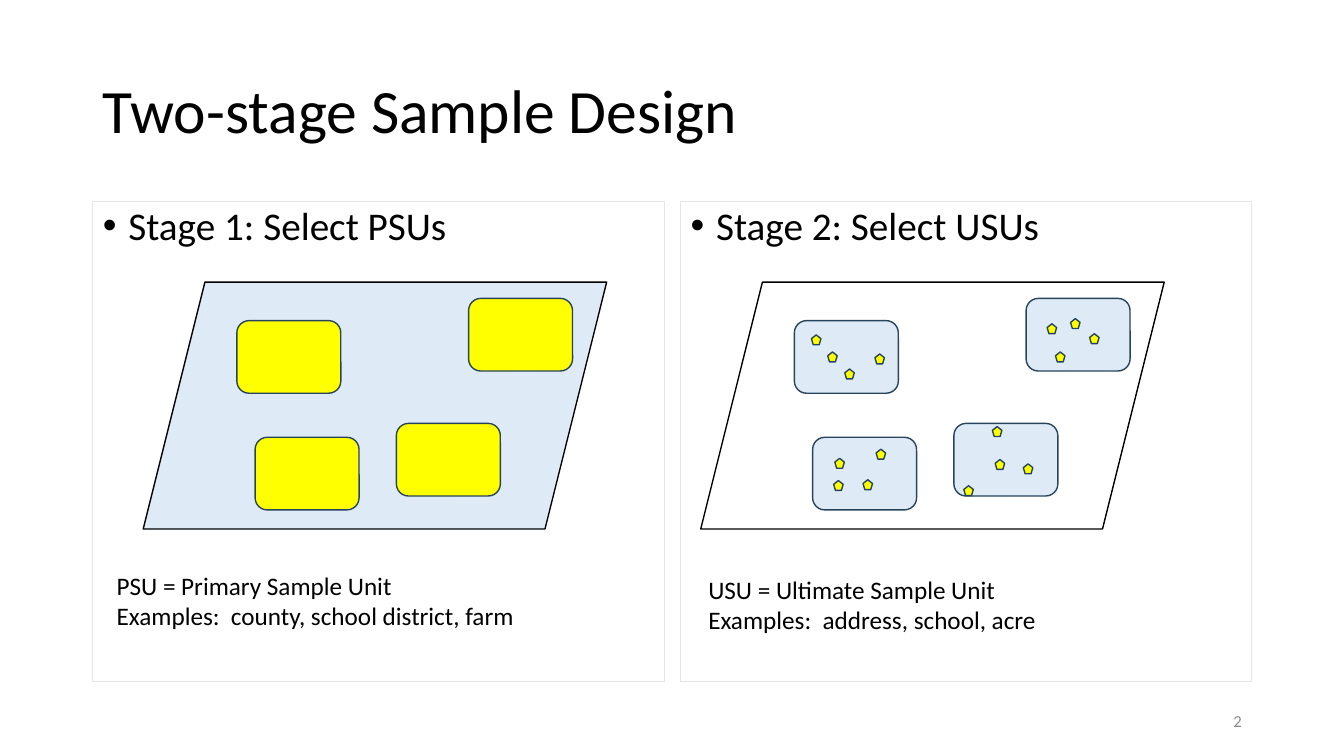
from lxml.etree import SubElement
from pptx import Presentation
from pptx.dml.color import RGBColor
from pptx.enum.shapes import MSO_SHAPE
from pptx.enum.text import MSO_ANCHOR, MSO_AUTO_SIZE, PP_ALIGN
from pptx.oxml.ns import qn
from pptx.util import Cm, Pt

HUES = {"ink": "000000", "edge": "28445D", "pale": "DEEBF7",
        "pick": "FFFF00", "frame": "E7E6E6", "gray": "8C8C8C"}

REGION = (11.68, 6.22)
CELL = (2.62, 1.83)
UNIT = (0.24, 0.25)

# Each cell's offset in the region, with its units' offsets in the cell
CELLS = [
    ((2.36, 0.97), [(0.43, 0.36), (0.84, 0.79), (1.27, 1.22), (2.03, 0.84)]),
    ((8.20, 0.41), [(0.53, 0.64), (1.60, 0.89), (0.74, 1.35), (1.12, 0.51)]),
    ((6.38, 3.56), [(0.97, 0.08), (0.25, 1.57), (1.75, 1.02), (1.04, 0.91)]),
    ((2.82, 3.91), [(0.56, 0.53), (1.60, 0.30), (1.27, 1.07), (0.53, 1.09)]),
]


class Deck:
    def __init__(self):
        self.prs = Presentation()
        self.prs.slide_width, self.prs.slide_height = Cm(33.87), Cm(19.05)
        self.prs.element.set("firstSlideNum", "2")
        self.slide = self.prs.slides.add_slide(self.prs.slide_layouts[3])

    def hue(self, name):
        return RGBColor.from_string(HUES[name])

    def style(self, font, size, color="ink"):
        font.name, font.size = "Calibri", Pt(size)
        font.color.rgb = self.hue(color)

    def holder(self, idx, box, text, size):
        """Move and fill a template placeholder; return it with its paragraph."""
        item = self.slide.placeholders[idx]
        item.left, item.top, item.width, item.height = map(Cm, box)
        frame = item.text_frame
        frame.text = text
        frame.auto_size = MSO_AUTO_SIZE.NONE
        para = frame.paragraphs[0]
        para.alignment = PP_ALIGN.LEFT
        para.line_spacing, para.space_before = 0.9, Pt(0)
        self.style(para.runs[0].font, size)
        return item, para

    def title(self, text):
        item, _ = self.holder(0, (2.34, 1.02, 29.21, 3.68), text, 44)
        item.text_frame.vertical_anchor = MSO_ANCHOR.MIDDLE

    def panel(self, idx, left, text):
        item, para = self.holder(idx, (left, 5.08, 14.4, 12.09), text, 28)
        item.line.color.rgb, item.line.width = self.hue("frame"), Pt(0.75)
        props = para._p.get_or_add_pPr()
        props.set("marL", str(Cm(0.64)))
        props.set("indent", str(-Cm(0.64)))
        SubElement(props, qn("a:buFont")).set("typeface", "Arial")
        SubElement(props, qn("a:buChar")).set("char", "•")

    def shape(self, shapes, kind, spot, size, fill, line="edge"):
        item = shapes.add_shape(kind, *map(Cm, spot + size))
        item.shadow.inherit = False
        if fill:
            item.fill.solid()
            item.fill.fore_color.rgb = self.hue(fill)
        else:
            item.fill.background()
        item.line.color.rgb, item.line.width = self.hue(line), Pt(1)

    def region(self, shapes, left, fill, inner, units=False):
        """Draw the sampled area with its cells and, if asked, their units."""
        top = 7.11
        self.shape(shapes, MSO_SHAPE.PARALLELOGRAM, (left, top), REGION, fill, "ink")
        spots = [((left + x, top + y), dots) for (x, y), dots in CELLS]
        for spot, _ in spots:
            self.shape(shapes, MSO_SHAPE.ROUNDED_RECTANGLE, spot, CELL, inner)
        if units:
            for (x, y), dots in spots:
                for dx, dy in dots:
                    self.shape(shapes, MSO_SHAPE.REGULAR_PENTAGON,
                               (x + dx, y + dy), UNIT, "pick")

    def note(self, left, top, text):
        frame = self.slide.shapes.add_textbox(*map(Cm, (left, top, 13.31, 1.8))).text_frame
        frame.word_wrap = True
        frame.text = text
        for para in frame.paragraphs:
            self.style(para.runs[0].font, 18)

    def number(self):
        frame = self.slide.shapes.add_textbox(*map(Cm, (23.93, 17.65, 7.62, 1.02))).text_frame
        frame.word_wrap = True
        frame.vertical_anchor = MSO_ANCHOR.MIDDLE
        para = frame.paragraphs[0]
        para.alignment = PP_ALIGN.RIGHT
        run = para.add_run()
        run.text = "2"
        self.style(run.font, 12, "gray")
        # Turn the styled run into a live slide number
        run._r.tag = qn("a:fld")
        run._r.set("id", "{B6F15528-21DE-4FAA-801E-634DDDAF4B2B}")
        run._r.set("type", "slidenum")


def main():
    deck = Deck()
    deck.title("Two-stage Sample Design")
    deck.panel(1, 2.34, "Stage 1: Select PSUs")
    deck.panel(2, 17.15, "Stage 2: Select USUs")
    shapes = deck.slide.shapes
    deck.region(shapes.add_group_shape().shapes, 3.61, "pale", "pick")
    deck.region(shapes, 17.66, None, "pale", units=True)
    deck.note(2.69, 14.25, "PSU = Primary Sample Unit\n"
                           "Examples:  county, school district, farm")
    deck.note(17.6, 14.35, "USU = Ultimate Sample Unit\n"
                           "Examples:  address, school, acre")
    deck.number()
    deck.prs.save("out.pptx")


if __name__ == "__main__":
    main()
